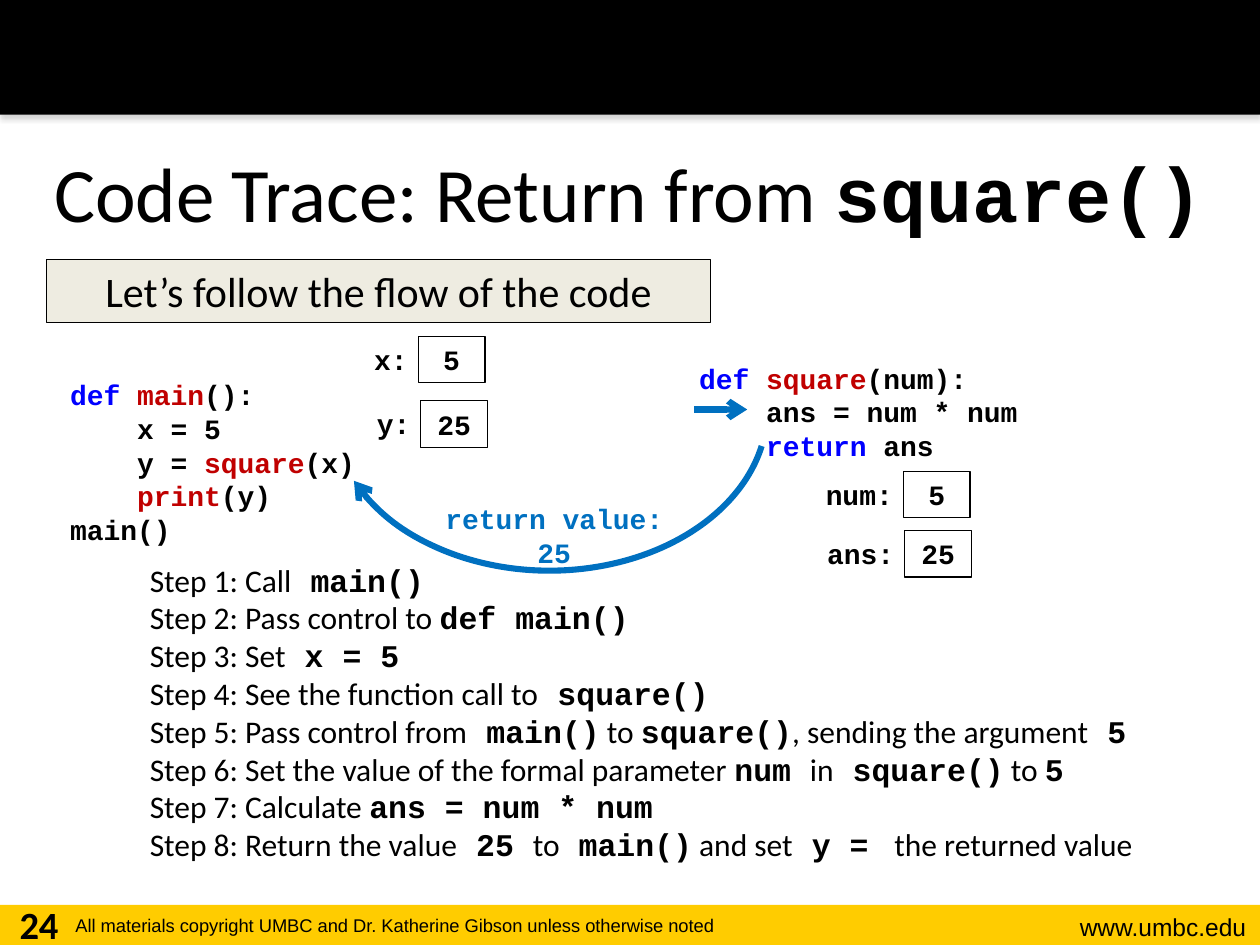
from lxml.etree import SubElement
from pptx import Presentation
from pptx.dml.color import RGBColor
from pptx.enum.shapes import MSO_CONNECTOR, MSO_SHAPE
from pptx.enum.text import MSO_ANCHOR, PP_ALIGN
from pptx.oxml.ns import qn
from pptx.util import Pt

COLORS = {
    "black": "000000", "gold": "FFCC00", "cream": "EEECE1", "shadow": "808080",
    "keyword": "0000FF", "function": "C00000", "arrow": "0070C0",
}
SANS, CODE = "Calibri", "Courier New"

# Code listings: each line is a list of (text, color) pieces
MAIN_CODE = [
    [("def ", "keyword"), ("main", "function"), ("():", "black")],
    [("    x = 5", "black")],
    [("    y = ", "black"), ("square", "function"), ("(x)", "black")],
    [("    ", "black"), ("print", "function"), ("(y)", "black")],
    [("main()", "black")],
]
SQUARE_CODE = [
    [("def ", "keyword"), ("square", "function"), ("(num):", "black")],
    [("    ans = num * num", "black")],
    [("    return ", "keyword"), ("ans", "black")],
]

# Backticks enclose code
STEPS = [
    "Step 1: Call` main()`",
    "Step 2: Pass control to `def main()`",
    "Step 3: Set` x = 5`",
    "Step 4: See the function call to` square()`",
    "Step 5: Pass control from` main()` to `square()`, sending the argument` 5`",
    "Step 6: Set the value of the formal parameter `num `in` square()` to `5`",
    "Step 7: Calculate `ans = num * num`",
    "Step 8: Return the value` 25 `to` main()` and set` y = ` the returned value",
]

# Variable boxes: name, value, left, top
VARIABLES = [
    ("x:", "5", 239, 192.2),
    ("y:", "25", 240.5, 229),
    ("num:", "5", 516.2, 269.3),
    ("ans:", "25", 517, 303.1),
]
BOX_WIDTH, BOX_HEIGHT, LABEL_WIDTH = 38.2, 26.6, 72


def rgb(color):
    return RGBColor.from_string(COLORS[color])


def points(*lengths):
    return [Pt(length) for length in lengths]


def format_run(run, size, font=SANS, color="black", bold=False):
    run.font.size = Pt(size)
    run.font.name = font
    run.font.bold = bold
    run.font.color.rgb = rgb(color)


def add_text_box(slide, place, anchor=MSO_ANCHOR.TOP):
    frame = slide.shapes.add_textbox(*points(*place)).text_frame
    frame.word_wrap = True
    frame.vertical_anchor = anchor
    return frame


def add_label(slide, place, text, size, font=SANS, color="black", bold=False,
              align=PP_ALIGN.LEFT):
    frame = add_text_box(slide, place)
    set_text(frame, text, size, font, color, bold, align)
    return frame


def set_text(frame, text, size, font=SANS, color="black", bold=False,
             align=PP_ALIGN.CENTER):
    frame.text = text
    paragraph = frame.paragraphs[0]
    paragraph.alignment = align
    format_run(paragraph.runs[0], size, font, color, bold)


def add_marked_lines(slide, place, lines, size, align=PP_ALIGN.LEFT,
                     anchor=MSO_ANCHOR.TOP):
    """Text lines in which backticks switch between prose and bold code."""
    frame = add_text_box(slide, place, anchor)
    for index, line in enumerate(lines):
        paragraph = frame.add_paragraph() if index else frame.paragraphs[0]
        paragraph.alignment = align
        for part, piece in enumerate(line.split("`")):
            if piece:
                run = paragraph.add_run()
                run.text = piece
                is_code = part % 2 == 1
                format_run(run, size, CODE if is_code else SANS, bold=is_code)


def add_code(slide, place, lines):
    frame = add_text_box(slide, place)
    for index, line in enumerate(lines):
        paragraph = frame.add_paragraph() if index else frame.paragraphs[0]
        for piece, color in line:
            run = paragraph.add_run()
            run.text = piece
            format_run(run, 16, CODE, color, True)


def add_rectangle(slide, place, fill=None, outlined=False):
    shape = slide.shapes.add_shape(MSO_SHAPE.RECTANGLE, *points(*place))
    shape.shadow.inherit = False
    if fill:
        shape.fill.solid()
        shape.fill.fore_color.rgb = rgb(fill)
    else:
        shape.fill.background()
    if outlined:
        shape.line.color.rgb = rgb("black")
        shape.line.width = Pt(0.75)
    else:
        shape.line.fill.background()
    return shape


def add_drop_shadow(shape):
    effects = shape._element.spPr.find(qn("a:effectLst"))
    shadow = SubElement(effects, qn("a:outerShdw"), blurRad=str(Pt(3.1)),
                        dist=str(Pt(1.8)), dir="5400000", rotWithShape="0")
    color = SubElement(shadow, qn("a:srgbClr"), val=COLORS["shadow"])
    SubElement(color, qn("a:alpha"), val="35000")


def style_arrow(shape):
    shape.line.color.rgb = rgb("arrow")
    shape.line.width = Pt(3.5)
    SubElement(shape.line._get_or_add_ln(), qn("a:tailEnd"), type="arrow")


def add_variable(slide, name, value, left, top):
    label = add_label(slide, (left - LABEL_WIDTH, top, LABEL_WIDTH, BOX_HEIGHT),
                      name, 16, CODE, bold=True, align=PP_ALIGN.RIGHT)
    label.margin_right = Pt(6)
    box = add_rectangle(slide, (left, top, BOX_WIDTH, BOX_HEIGHT), outlined=True)
    box.text_frame.margin_left = box.text_frame.margin_right = 0
    box.text_frame.vertical_anchor = MSO_ANCHOR.MIDDLE
    set_text(box.text_frame, value, 16, CODE, bold=True)


def add_return_arc(slide):
    arc = slide.shapes.add_shape(MSO_SHAPE.ARC, *points(221.8, 109.4, 184.3, 249.1))
    arc.shadow.inherit = False
    arc.rotation = 270
    arc.adjustments[0], arc.adjustments[1] = 59.87, 149.96
    arc.fill.background()
    style_arrow(arc)


def add_line_arrow(slide, start_x, end_x, y):
    connector = slide.shapes.add_connector(
        MSO_CONNECTOR.STRAIGHT, *points(start_x, y, end_x, y))
    style_arrow(connector)
    SubElement(connector._element.spPr, qn("a:effectLst"))


def main():
    presentation = Presentation()
    presentation.slide_width, presentation.slide_height = points(720, 540)
    slide = presentation.slides.add_slide(presentation.slide_layouts[6])

    # Header and footer bands
    add_rectangle(slide, (0, 517, 720, 23), "gold")
    add_drop_shadow(add_rectangle(slide, (0, 0, 720, 65.5), "black"))
    add_label(slide, (576, 517.7, 143.3, 24.5), "www.umbc.edu", 14, "Arial",
              align=PP_ALIGN.RIGHT)
    add_label(slide, (36, 519, 472, 21),
              "All materials copyright UMBC and Dr. Katherine Gibson "
              "unless otherwise noted", 10.5, "Arial")
    add_label(slide, (0, 511.2, 44.6, 28.8), "24", 22, bold=True,
              align=PP_ALIGN.CENTER)

    # Title and banner
    add_marked_lines(slide, (21.6, 64.8, 676, 90),
                     ["Code Trace: Return from `square()`"], 44,
                     PP_ALIGN.CENTER, MSO_ANCHOR.MIDDLE)
    banner = add_rectangle(slide, (26.6, 148.3, 379.4, 36), "cream", outlined=True)
    set_text(banner.text_frame, "Let’s follow the flow of the code", 24)

    # Code and steps
    add_code(slide, (33, 212.4, 201.6, 104.4), MAIN_CODE)
    add_code(slide, (392.4, 203, 319.7, 65.5), SQUARE_CODE)
    add_marked_lines(slide, (78.5, 316.8, 597, 181.4), STEPS, 18)

    # Variables and control flow
    for variable in VARIABLES:
        add_variable(slide, *variable)
    add_return_arc(slide)
    add_label(slide, (242.6, 283, 148.3, 46), "return value: 25", 16, CODE,
              "arrow", True, PP_ALIGN.CENTER)
    add_line_arrow(slide, 396.7, 427, 234)

    presentation.save("out.pptx")


if __name__ == "__main__":
    main()
